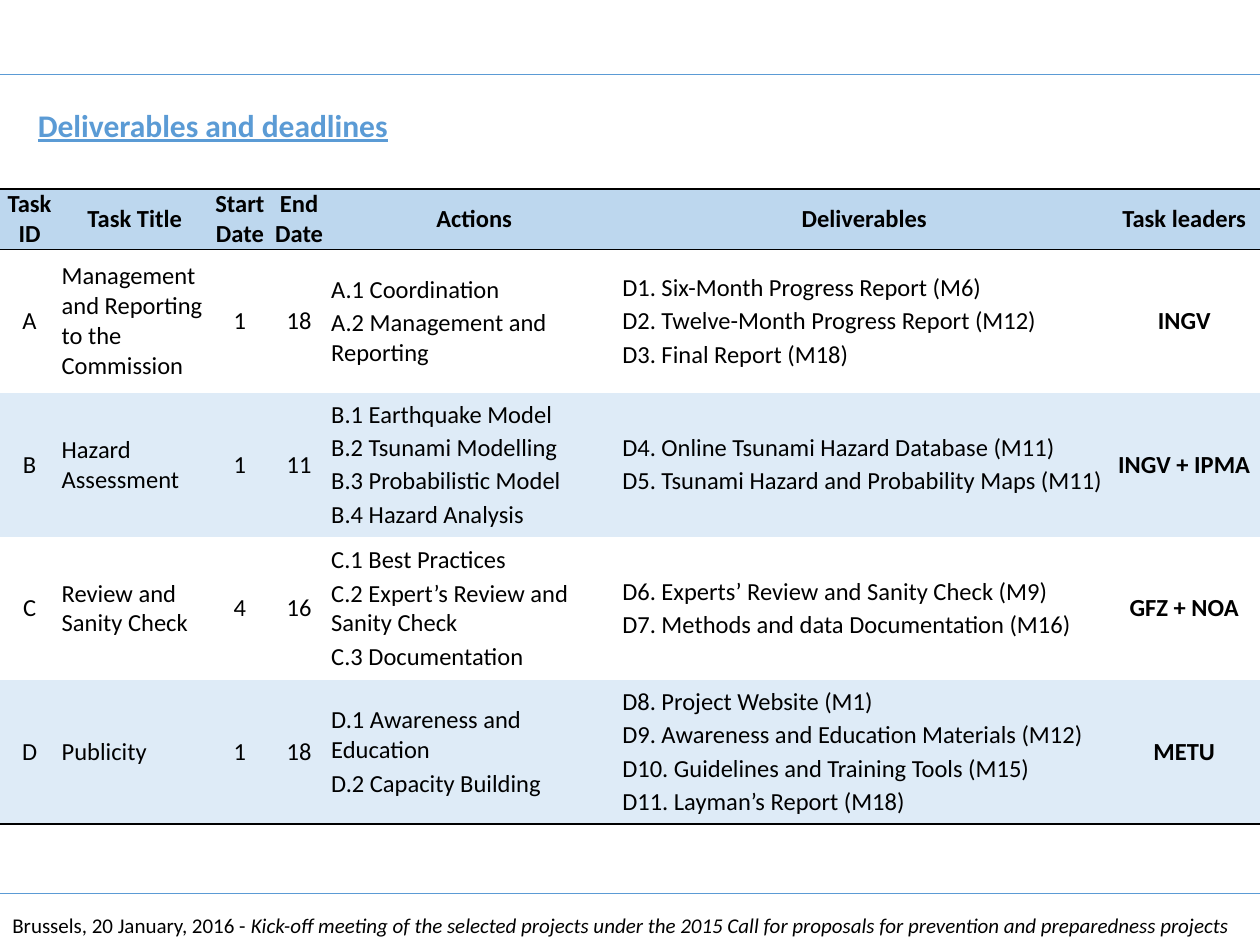
from lxml.etree import SubElement
from pptx import Presentation
from pptx.dml.color import RGBColor
from pptx.enum.shapes import MSO_CONNECTOR
from pptx.enum.text import MSO_ANCHOR, MSO_AUTO_SIZE, PP_ALIGN
from pptx.oxml.ns import qn
from pptx.util import Inches, Pt

COLORS = {"blue": "5B9BD5", "head": "BDD7EE", "band": "DEEBF7", "text": "000000"}
FONT = "Calibri"
WIDTHS = [0.47, 1.2, 0.47, 0.47, 2.31, 3.88, 1.2]
HEIGHTS = [0.48] + [1.14] * 4
LEFT_COLS = (1, 4, 5)
LEADER = 6

# One string per cell, one line per paragraph
ROWS = [
    ["Task ID", "Task Title", "Start Date", "End Date", "Actions",
     "Deliverables", "Task leaders"],
    ["A", "Management and Reporting to the Commission", "1", "18",
     "A.1 Coordination\nA.2 Management and Reporting",
     "D1. Six-Month Progress Report (M6)\n"
     "D2. Twelve-Month Progress Report (M12)\n"
     "D3. Final Report (M18)",
     "INGV"],
    ["B", "Hazard Assessment", "1", "11",
     "B.1 Earthquake Model\nB.2 Tsunami Modelling\n"
     "B.3 Probabilistic Model\nB.4 Hazard Analysis",
     "D4. Online Tsunami Hazard Database (M11)\n"
     "D5. Tsunami Hazard and Probability Maps (M11)",
     "INGV + IPMA"],
    ["C", "Review and Sanity Check", "4", "16",
     "C.1 Best Practices\nC.2 Expert’s Review and Sanity Check\n"
     "C.3 Documentation",
     "D6. Experts’ Review and Sanity Check (M9)\n"
     "D7. Methods and data Documentation (M16)",
     "GFZ + NOA"],
    ["D", "Publicity", "1", "18",
     "D.1 Awareness and Education\nD.2 Capacity Building",
     "D8. Project Website (M1)\n"
     "D9. Awareness and Education Materials (M12)\n"
     "D10. Guidelines and Training Tools (M15)\n"
     "D11. Layman’s Report (M18)",
     "METU"],
]


def color(name):
    return RGBColor.from_string(COLORS[name])


def style(font, size, name="text", bold=False):
    font.name = FONT
    font.size = Pt(size)
    font.bold = bold
    font.color.rgb = color(name)


def add_rule(slide, top):
    line = slide.shapes.add_connector(
        MSO_CONNECTOR.STRAIGHT, 0, Inches(top), Inches(10), Inches(top))
    line.line.color.rgb = color("blue")
    line.line.width = Pt(0.5)
    SubElement(line._element.spPr, qn("a:effectLst"))


def set_title(slide, text):
    title = slide.shapes.title
    title.left, title.top = Inches(0.2), Inches(0.79)
    title.width, title.height = Inches(3), Inches(0.4)
    frame = title.text_frame
    frame.text = text
    frame.word_wrap = False
    frame.auto_size = MSO_AUTO_SIZE.SHAPE_TO_FIT_TEXT
    para = frame.paragraphs[0]
    para.alignment = PP_ALIGN.LEFT
    font = para.runs[0].font
    style(font, 18, "blue", bold=True)
    font.underline = True


def add_footer(slide, place, event):
    box = slide.shapes.add_textbox(0, Inches(7.19), Inches(10), Inches(0.3))
    frame = box.text_frame
    frame.word_wrap = True
    frame.auto_size = MSO_AUTO_SIZE.SHAPE_TO_FIT_TEXT
    para = frame.paragraphs[0]
    for text, slant in ((place, False), (event, True)):
        run = para.add_run()
        run.text = text
        style(run.font, 12)
        run.font.italic = slant


def set_edges(cell, shown):
    props = cell._tc.get_or_add_tcPr()
    for side in "LRTB":
        edge = SubElement(props, qn(f"a:ln{side}"), w=str(Pt(1)))
        if side in shown:
            fill = SubElement(edge, qn("a:solidFill"))
            SubElement(fill, qn("a:srgbClr"), val=COLORS["text"])
        else:
            SubElement(edge, qn("a:noFill"))


def set_cell(cell, text, row, col):
    # Rules above and below the header, and below the last row
    set_edges(cell, {0: "TB", 1: "T", len(ROWS) - 1: "B"}.get(row, ""))
    if row % 2:
        cell.fill.background()
    else:
        cell.fill.solid()
        cell.fill.fore_color.rgb = color("band" if row else "head")
    cell.vertical_anchor = MSO_ANCHOR.MIDDLE
    cell.margin_left = cell.margin_right = Inches(0.02)
    cell.margin_top = cell.margin_bottom = 0
    cell.text_frame.text = text
    left = row > 0 and col in LEFT_COLS
    for i, para in enumerate(cell.text_frame.paragraphs):
        para.alignment = PP_ALIGN.LEFT if left else PP_ALIGN.CENTER
        para.space_before = Pt(2 if i else 0)
        for run in para.runs:
            style(run.font, 14, bold=row == 0 or col == LEADER)


def add_tasks(slide):
    table = slide.shapes.add_table(
        len(ROWS), len(WIDTHS), 0, Inches(1.5),
        Inches(sum(WIDTHS)), Inches(sum(HEIGHTS))).table
    table.first_row = table.horz_banding = False
    for col, width in zip(table.columns, WIDTHS):
        col.width = Inches(width)
    for row, height in zip(table.rows, HEIGHTS):
        row.height = Inches(height)
    for r, texts in enumerate(ROWS):
        for c, text in enumerate(texts):
            set_cell(table.cell(r, c), text, r, c)


def main():
    deck = Presentation()
    deck.slide_width, deck.slide_height = Inches(10), Inches(7.5)
    slide = deck.slides.add_slide(deck.slide_layouts[5])
    # Frame of the page
    for top in (0.59, 7.09):
        add_rule(slide, top)
    add_footer(slide, "Brussels, 20 January, 2016 - ",
               "Kick-off meeting of the selected projects under the 2015 "
               "Call for proposals for prevention and preparedness projects")
    # Content
    set_title(slide, "Deliverables and deadlines")
    add_tasks(slide)
    deck.save("out.pptx")


if __name__ == "__main__":
    main()
